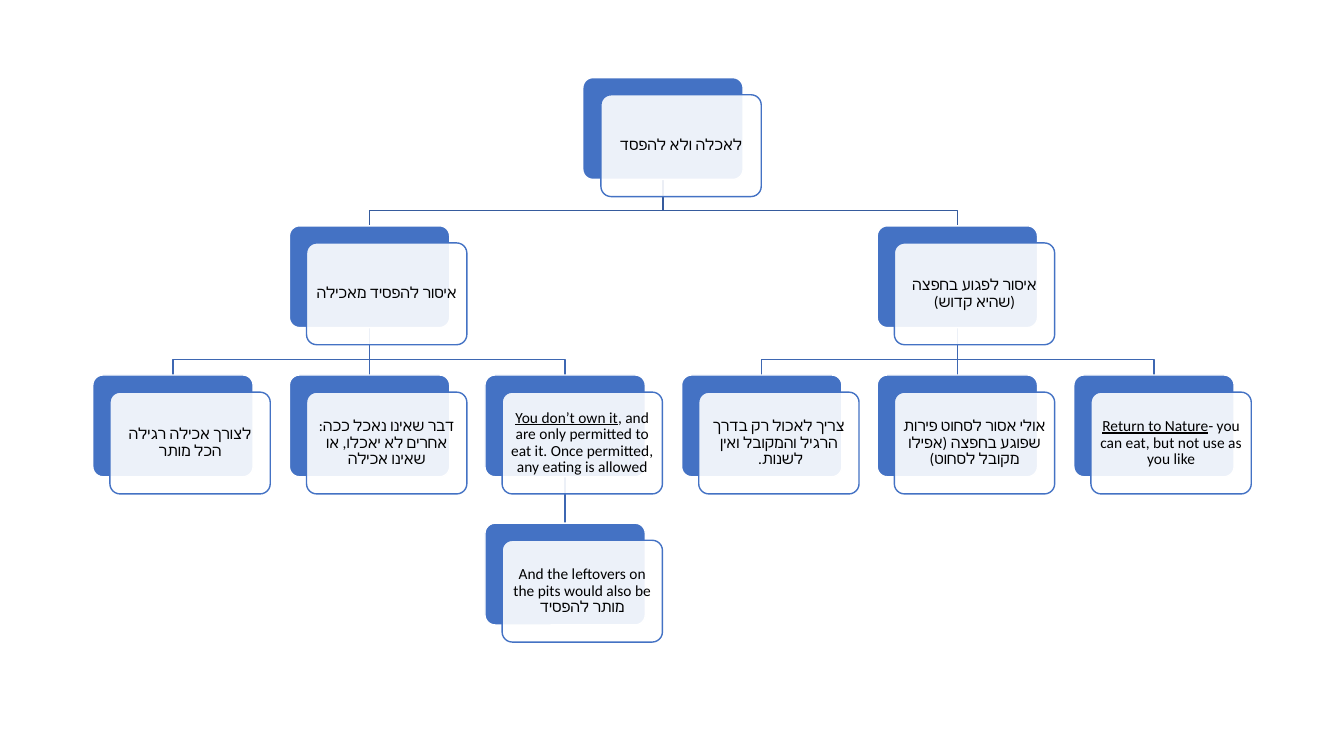
from lxml.etree import SubElement
from pptx import Presentation
from pptx.dml.color import RGBColor
from pptx.enum.shapes import MSO_CONNECTOR, MSO_SHAPE
from pptx.enum.text import MSO_ANCHOR, PP_ALIGN
from pptx.oxml.ns import qn
from pptx.util import Pt

BLUE = RGBColor(0x44, 0x72, 0xC4)
UPPER_LINE = RGBColor(0x36, 0x5B, 0x9D)
LOWER_LINE = RGBColor(0x3E, 0x67, 0xB2)
WHITE = RGBColor(0xFF, 0xFF, 0xFF)
BLACK = RGBColor(0x00, 0x00, 0x00)

EMU_PER_PX = 9144
SLIDE_WIDTH, SLIDE_HEIGHT = 1333, 750
CARD_WIDTH, CARD_HEIGHT = 159, 101
CARD_OFFSET = 17
FIRST_LEFT, FIRST_TOP = 92, 77
COLUMN_STEP, ROW_STEP = 194.6, 147.4
BRANCH_RISE = 15

CARDS = {
    "root": (2.5, 0, [("לאכלה ולא להפסד", False)]),
    "waste": (1, 1, [("איסור להפסיד מאכילה", False)]),
    "regular": (0, 2, [("לצורך אכילה רגילה הכל מותר", False)]),
    "not eaten": (1, 2, [("דבר שאינו נאכל ככה: אחרים לא יאכלו, או שאינו אכילה", False)]),
    "not owned": (2, 2, [("You don’t own it", True),
                         (", and are only permitted to eat it. Once permitted, any eating is allowed", False)]),
    "leftovers": (2, 3, [("And the leftovers on the pits would also be מותר להפסיד", False)]),
    "object": (4, 1, [("איסור לפגוע בחפצה (שהיא קדוש)", False)]),
    "usual way": (3, 2, [("צריך לאכול רק בדרך הרגיל והמקובל ואין לשנות. ", False)]),
    "juicing": (4, 2, [("אולי אסור לסחוט פירות שפוגע בחפצה (אפילו מקובל לסחוט)", False)]),
    "nature": (5, 2, [("Return to Nature", True),
                      ("- you can eat, but not use as you like", False)]),
}

CHILDREN = {
    "root": ["waste", "object"],
    "waste": ["regular", "not eaten", "not owned"],
    "not owned": ["leftovers"],
    "object": ["usual way", "juicing", "nature"],
}


def px(length):
    return round(length) * EMU_PER_PX


def add_text(paragraph, text, font="Calibri", size=11, color=BLACK, underline=False):
    run = paragraph.add_run()
    run.text = text
    run.font.name = font
    run.font.size = Pt(size)
    run.font.color.rgb = color
    run.font.underline = underline
    SubElement(run.font._element, qn("a:cs")).set("typeface", font)


class TreeSlide:
    def __init__(self, presentation):
        self.slide = presentation.slides.add_slide(presentation.slide_layouts[6])
        self.shapes = self.slide.shapes
        self.line_width = Pt(1)

    def rectangle(self, left, top, fill, line):
        shape = self.shapes.add_shape(MSO_SHAPE.ROUNDED_RECTANGLE, px(left), px(top),
                                      px(CARD_WIDTH), px(CARD_HEIGHT))
        shape.adjustments[0] = 0.1
        shape.shadow.inherit = False
        shape.fill.solid()
        shape.fill.fore_color.rgb = fill
        self.outline(shape, line)
        return shape

    def outline(self, shape, color):
        shape.line.color.rgb = color
        shape.line.width = self.line_width

    def card(self, column, row, runs):
        left = FIRST_LEFT + column * COLUMN_STEP
        top = FIRST_TOP + row * ROW_STEP
        back = self.rectangle(left, top, BLUE, WHITE)
        front = self.rectangle(left + CARD_OFFSET, top + CARD_OFFSET, WHITE, BLUE)
        color = front.fill._xPr.find(qn("a:solidFill")).find(qn("a:srgbClr"))
        SubElement(color, qn("a:alpha")).set("val", "90000")
        self.label(front.text_frame, runs)
        return back

    def label(self, frame, runs):
        frame.word_wrap = True
        frame.vertical_anchor = MSO_ANCHOR.MIDDLE
        frame.margin_left = frame.margin_right = px(5)
        frame.margin_top = frame.margin_bottom = px(5)
        paragraph = frame.paragraphs[0]
        paragraph.alignment = PP_ALIGN.CENTER
        paragraph.line_spacing = 0.9
        paragraph._p.get_or_add_pPr().set("rtl", "1")
        for text, underline in runs:
            add_text(paragraph, text, underline=underline)

    def branch(self, parent, child, color):
        start_x, end_x = (card.left + card.width // 2 for card in (parent, child))
        start_y, end_y = parent.top + parent.height, child.top
        if start_x == end_x:
            line = self.shapes.add_connector(MSO_CONNECTOR.STRAIGHT, start_x, start_y, end_x, end_y)
            line.begin_connect(parent, 2)
            line.end_connect(child, 0)
            SubElement(line._element.spPr, qn("a:effectLst"))
        else:
            turn_y = end_y - px(BRANCH_RISE)
            builder = self.shapes.build_freeform(start_x, start_y)
            builder.add_line_segments([(start_x, turn_y), (end_x, turn_y), (end_x, end_y)], close=False)
            line = builder.convert_to_shape()
            line.shadow.inherit = False
            line.fill.background()
        self.outline(line, color)
        self.send_to_back(line)

    def send_to_back(self, shape):
        self.shapes._spTree.insert(2, shape._element)


def main():
    presentation = Presentation()
    presentation.slide_width = px(SLIDE_WIDTH)
    presentation.slide_height = px(SLIDE_HEIGHT)
    tree = TreeSlide(presentation)
    cards = {name: tree.card(*card) for name, card in CARDS.items()}
    for parent, children in CHILDREN.items():
        color = UPPER_LINE if parent == "root" else LOWER_LINE
        for child in children:
            tree.branch(cards[parent], cards[child], color)
    presentation.save("out.pptx")


if __name__ == "__main__":
    main()
